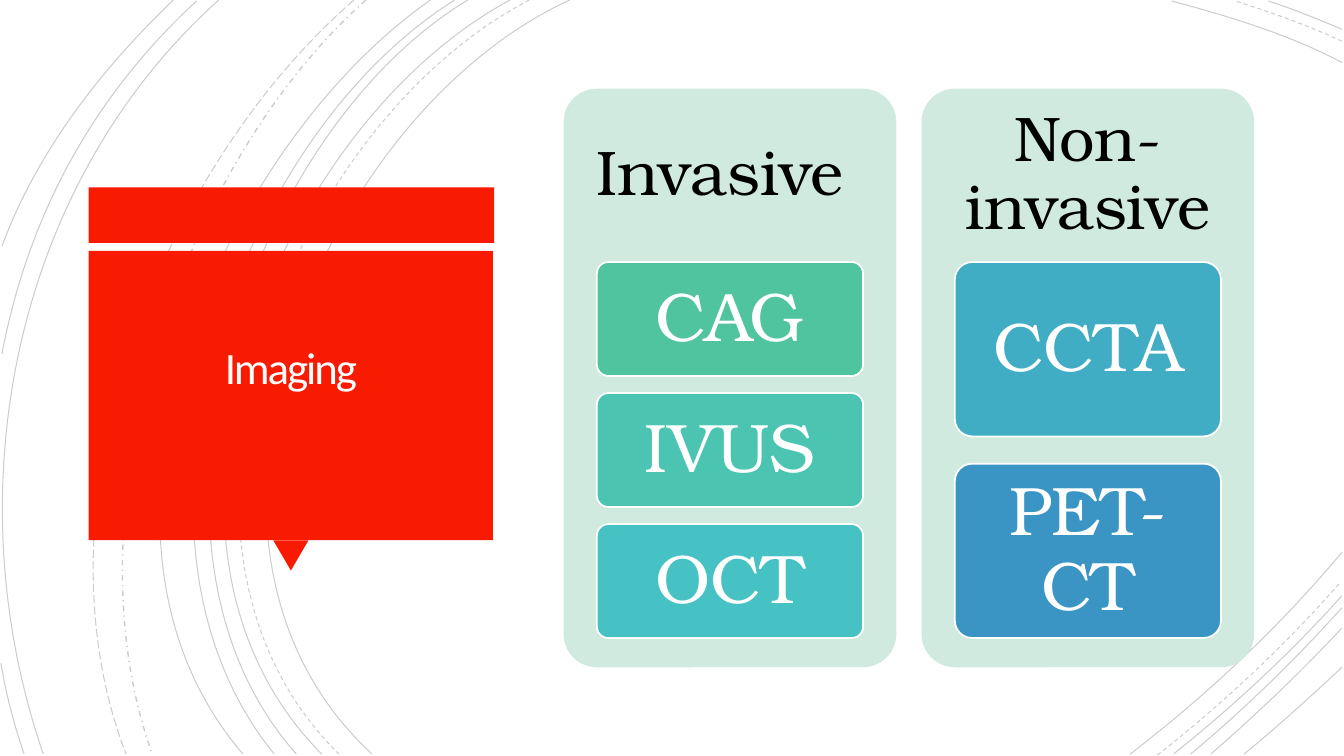
from lxml.etree import SubElement
from pptx import Presentation
from pptx.dml.color import RGBColor
from pptx.enum.dml import MSO_LINE
from pptx.enum.shapes import MSO_SHAPE
from pptx.enum.text import MSO_ANCHOR, PP_ALIGN
from pptx.oxml.ns import qn
from pptx.util import Pt

PX = 9144  # EMU per px, 100 px to the inch
SERIF = "TeX Gyre Bonum"
COLORS = {
    "background": "FFFFFF", "arc": "000000", "banner": "F81B02",
    "title": "FFFEFF", "panel": "D0EADF", "heading": "000000",
    "tile_text": "FFFFFF", "tile_edge": "FFFFFF",
    "CAG": "50C49F", "IVUS": "4BC4B1", "OCT": "46C2C4",
    "CCTA": "40ADC4", "PET-CT": "3B95C4",
}
SOLID, DASH = MSO_LINE.SOLID, MSO_LINE.DASH
# Start, two control points and end of each arc, then its dash
ARCS = [
    ((565, 0), (315, 115), (143, 540), (369, 748), SOLID),
    ((1331, 62), (1278, 34), (1218, 16), (1162, 1), SOLID),
    ((1121, 748), (1197, 690), (1269, 622), (1331, 548), SOLID),
    ((525, 0), (285, 125), (123, 537), (336, 748), DASH),
    ((1331, 41), (1297, 25), (1260, 12), (1225, 1), DASH),
    ((1148, 749), (1213, 698), (1275, 640), (1330, 577), DASH),
    ((506, 0), (270, 127), (110, 537), (319, 748), SOLID),
    ((1331, 29), (1307, 19), (1283, 9), (1258, 1), SOLID),
    ((1164, 748), (1223, 701), (1280, 648), (1331, 591), SOLID),
    ((464, 0), (244, 133), (110, 541), (294, 748), SOLID),
    ((1181, 748), (1234, 704), (1284, 655), (1331, 603), SOLID),
    ((451, 0), (231, 138), (97, 533), (272, 748), SOLID),
    ((1201, 748), (1246, 709), (1290, 667), (1331, 623), SOLID),
    ((427, 0), (217, 147), (53, 529), (241, 748), SOLID),
    ((1234, 748), (1267, 721), (1299, 692), (1331, 662), SOLID),
    ((363, 0), (176, 166), (65, 509), (151, 748), MSO_LINE.DASH_DOT),
    ((351, 0), (157, 169), (29, 499), (125, 748), MSO_LINE.LONG_DASH),
    ((217, 0), (11, 185), (-46, 490), (43, 748), SOLID),
    ((195, 1), (92, 96), (28, 214), (2, 351), SOLID),
    ((1, 658), (6, 689), (14, 719), (24, 748), SOLID),
    ((172, 0), (100, 69), (37, 150), (2, 244), SOLID),
]
PANELS = [
    (559, "Invasive ", ["CAG", "IVUS", "OCT"]),
    (914, "Non-invasive", ["CCTA", "PET-CT"]),
]
PANEL_TOP, PANEL_W, PANEL_H, HEADING_H = 88, 330, 574, 172
TILE_INDENT, TILE_W, TILES_H = 33, 264, 373
GAP_RATIO = 2 / 13  # gap between tiles, as a share of tile height


def rgb(name):
    return RGBColor.from_string(COLORS[name])


def add_arc(slide, start, control1, control2, end, dash):
    """Draw one cubic curve as a faint hairline."""
    builder = slide.shapes.build_freeform(*start, scale=PX)
    builder.add_line_segments([control1, control2, end], close=False)
    sp = builder.convert_to_shape()
    sp.shadow.inherit = False
    sp.fill.background()
    sp.line.color.rgb = rgb("arc")
    sp.line.width = Pt(1 if dash == MSO_LINE.DASH_DOT else 0.75)
    sp.line.dash_style = dash
    tint = next(sp.line._ln.iter(qn("a:srgbClr")))
    SubElement(tint, qn("a:alpha")).set("val", "20000")
    segments = list(sp._element.iter(qn("a:lnTo")))
    curve = SubElement(segments[0].getparent(), qn("a:cubicBezTo"))
    for segment in segments:
        curve.append(segment[0])
        segment.getparent().remove(segment)


def add_block(slide, kind, x, y, w, h, fill, edge=None):
    sp = slide.shapes.add_shape(kind, x * PX, y * PX, w * PX, h * PX)
    sp.shadow.inherit = False
    sp.fill.solid()
    sp.fill.fore_color.rgb = rgb(fill)
    if edge:
        sp.line.color.rgb = rgb(edge)
        sp.line.width = Pt(1.25)
    else:
        sp.line.fill.background()
    if kind == MSO_SHAPE.ROUNDED_RECTANGLE:
        sp.adjustments[0] = 0.1
    return sp


def add_box(slide, x, y, w, h):
    return slide.shapes.add_textbox(x * PX, y * PX, w * PX, h * PX)


def write(sp, text, *, size, color, insets, font=SERIF, spacing=0.9,
          anchor=MSO_ANCHOR.MIDDLE, tracking=None):
    """Set one centred paragraph; insets run left, top, right, bottom."""
    tf = sp.text_frame
    tf.word_wrap = True
    tf.vertical_anchor = anchor
    (tf.margin_left, tf.margin_top,
     tf.margin_right, tf.margin_bottom) = [inset * PX for inset in insets]
    p = tf.paragraphs[0]
    p.alignment = PP_ALIGN.CENTER
    p.line_spacing = spacing
    r = p.add_run()
    r.text = text
    r.font.name = font
    r.font.size = Pt(size)
    r.font.color.rgb = rgb(color)
    if tracking:
        r.font._element.set("spc", str(tracking))


def add_banner(slide):
    add_block(slide, MSO_SHAPE.RECTANGLE, 88, 186, 402, 55, "banner")
    pointer = add_block(slide, MSO_SHAPE.ISOSCELES_TRIANGLE,
                        271, 536, 35, 30, "banner")
    pointer.rotation = 180
    add_block(slide, MSO_SHAPE.RECTANGLE, 88, 249, 401, 287, "banner")
    write(add_box(slide, 97, 257, 383, 134), "Imaging", size=32,
          color="title", insets=(25, 25, 25, 0), font="Calibri",
          spacing=0.85, anchor=MSO_ANCHOR.BOTTOM, tracking=-150)


def add_panel(slide, x, heading, tiles):
    add_block(slide, MSO_SHAPE.ROUNDED_RECTANGLE,
              x, PANEL_TOP, PANEL_W, PANEL_H, "panel")
    write(add_box(slide, x, PANEL_TOP, PANEL_W, HEADING_H), heading,
          size=45, color="heading", insets=(19, 19, 19, 19))
    n = len(tiles)
    height = TILES_H / (n + (n - 1) * GAP_RATIO)
    for i, name in enumerate(tiles):
        y = PANEL_TOP + HEADING_H + round(i * height * (1 + GAP_RATIO))
        tile = add_block(slide, MSO_SHAPE.ROUNDED_RECTANGLE, x + TILE_INDENT,
                         y, TILE_W, round(height), name, edge="tile_edge")
        write(tile, name, size=49, color="tile_text", insets=(14, 10, 14, 10))


def main():
    prs = Presentation()
    prs.slide_width, prs.slide_height = 1333 * PX, 750 * PX
    slide = prs.slides.add_slide(prs.slide_layouts[6])
    slide.background.fill.solid()
    slide.background.fill.fore_color.rgb = rgb("background")
    for arc in ARCS:
        add_arc(slide, *arc)
    add_banner(slide)
    for panel in PANELS:
        add_panel(slide, *panel)
    prs.save("out.pptx")


if __name__ == "__main__":
    main()
